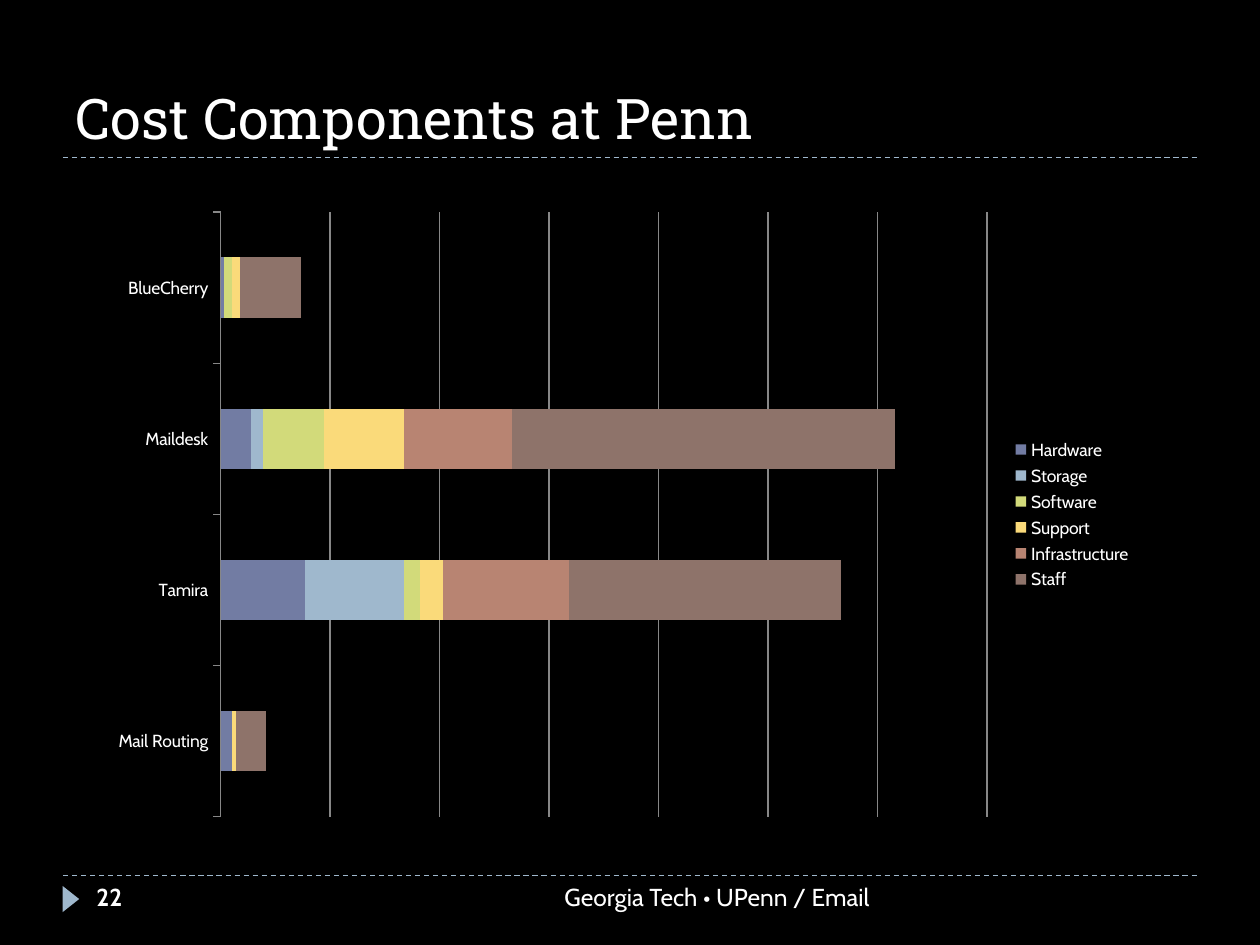
from lxml import etree
from pptx import Presentation
from pptx.chart.data import CategoryChartData
from pptx.dml.color import RGBColor
from pptx.enum.chart import XL_CHART_TYPE, XL_LEGEND_POSITION, XL_TICK_LABEL_POSITION, XL_TICK_MARK
from pptx.enum.dml import MSO_LINE
from pptx.enum.shapes import MSO_CONNECTOR, MSO_SHAPE
from pptx.enum.text import MSO_ANCHOR, PP_ALIGN
from pptx.oxml import parse_xml
from pptx.oxml.ns import nsdecls, qn
from pptx.util import Pt

COLORS = {
    "background": "000000",
    "text": "FFFFFF",
    "accent": "9FB8CD",
    "grid": "878787",
}
CATEGORIES = ["Mail Routing", "Tamira", "Maildesk", "BlueCherry"]
SERIES = [
    ("Hardware", "727CA3", (3, 22, 8, 1)),
    ("Storage", "9FB8CD", (0, 26, 3, 0)),
    ("Software", "D2DA7A", (0, 4, 16, 2)),
    ("Support", "FADA7A", (1, 6, 21, 2)),
    ("Infrastructure", "B88472", (0, 33, 28, 0)),
    ("Staff", "8E736A", (8, 71, 100, 16)),
]
PLOT_AREA = {"x": 0.12, "y": 0.02, "w": 0.73, "h": 0.96}
AXIS_MAXIMUM = 200
GRID_INTERVALS = 7


class SlideBuilder:
    heading_font = "Roboto Slab"
    body_font = "Cabin"

    def __init__(self, slide):
        self.slide = slide
        fill = slide.background.fill
        fill.solid()
        fill.fore_color.rgb = self.color("background")

    def color(self, name):
        return RGBColor.from_string(COLORS[name])

    def format_font(self, font, name, size, bold=False):
        font.name = name
        font.size = Pt(size)
        font.bold = bold
        font.color.rgb = self.color("text")

    def place(self, shape, box):
        shape.left, shape.top, shape.width, shape.height = map(Pt, box)

    def title(self, text, box):
        shape = self.slide.shapes.title
        self.place(shape, box)
        frame = shape.text_frame
        frame.text = text
        frame.vertical_anchor = MSO_ANCHOR.BOTTOM
        paragraph = frame.paragraphs[0]
        paragraph.alignment = PP_ALIGN.LEFT
        self.format_font(paragraph.runs[0].font, self.heading_font, 32)

    def text(self, text, box, align=PP_ALIGN.LEFT, bold=False):
        frame = self.slide.shapes.add_textbox(*map(Pt, box)).text_frame
        frame.word_wrap = True
        frame.text = text
        paragraph = frame.paragraphs[0]
        paragraph.alignment = align
        self.format_font(paragraph.runs[0].font, self.body_font, 14, bold)

    def dashed_rule(self, left, right, top):
        rule = self.slide.shapes.add_connector(
            MSO_CONNECTOR.STRAIGHT, Pt(left), Pt(top), Pt(right), Pt(top))
        rule.line.color.rgb = self.color("accent")
        rule.line.width = Pt(0.75)
        rule.line.dash_style = MSO_LINE.DASH
        etree.SubElement(rule._element.spPr, qn("a:effectLst"))

    def marker(self, box):
        shape = self.slide.shapes.add_shape(MSO_SHAPE.ISOSCELES_TRIANGLE, *map(Pt, box))
        shape.rotation = 90
        shape.shadow.inherit = False
        shape.fill.solid()
        shape.fill.fore_color.rgb = self.color("accent")
        shape.line.fill.background()

    def stacked_bars(self, box):
        data = CategoryChartData()
        data.categories = CATEGORIES
        for name, _, values in SERIES:
            data.add_series(name, values)
        chart = self.slide.shapes.add_chart(
            XL_CHART_TYPE.BAR_STACKED, *map(Pt, box), data).chart
        chart.has_title = False
        self.format_font(chart.font, self.body_font, 10)
        chart.has_legend = True
        chart.legend.position = XL_LEGEND_POSITION.RIGHT
        chart.legend.include_in_layout = False
        self.format_font(chart.legend.font, self.body_font, 10)

        plot = chart.plots[0]
        plot.gap_width = 150
        plot.overlap = 100
        plot.vary_by_categories = False
        for series, (_, fill_color, _) in zip(plot.series, SERIES):
            series.format.fill.solid()
            series.format.fill.fore_color.rgb = RGBColor.from_string(fill_color)

        category_axis = chart.category_axis
        category_axis.major_tick_mark = XL_TICK_MARK.OUTSIDE
        category_axis.tick_label_position = XL_TICK_LABEL_POSITION.LOW
        category_axis.format.line.color.rgb = self.color("grid")
        value_axis = chart.value_axis
        value_axis.visible = False
        value_axis.minimum_scale = 0
        value_axis.maximum_scale = AXIS_MAXIMUM
        value_axis.major_unit = AXIS_MAXIMUM / GRID_INTERVALS
        value_axis.has_major_gridlines = True
        value_axis.major_gridlines.format.line.color.rgb = self.color("grid")
        self.set_plot_area(chart)

    def set_plot_area(self, chart):
        plot_area = chart._chartSpace.chart.plotArea
        for layout in plot_area.findall(qn("c:layout")):
            plot_area.remove(layout)
        modes = '<c:layoutTarget val="inner"/><c:xMode val="edge"/><c:yMode val="edge"/>'
        sizes = "".join(f'<c:{key} val="{value}"/>' for key, value in PLOT_AREA.items())
        plot_area.insert(0, parse_xml(
            f'<c:layout {nsdecls("c")}><c:manualLayout>{modes}{sizes}</c:manualLayout></c:layout>'))


def main():
    presentation = Presentation()
    presentation.slide_width, presentation.slide_height = Pt(720), Pt(540)
    builder = SlideBuilder(presentation.slides.add_slide(presentation.slide_layouts[5]))
    for top in (500.4, 90):
        builder.dashed_rule(36, 684, top)
    builder.marker((33, 509, 15, 9.5))
    builder.title("Cost Components at Penn", (36, 12, 648, 78))
    builder.stacked_bars((54, 114, 600, 360))
    builder.text("Georgia Tech • UPenn / Email", (228, 500.4, 276, 28.8), PP_ALIGN.RIGHT)
    builder.text("22", (48, 500.4, 156, 28.8), bold=True)
    presentation.save("out.pptx")


if __name__ == "__main__":
    main()
